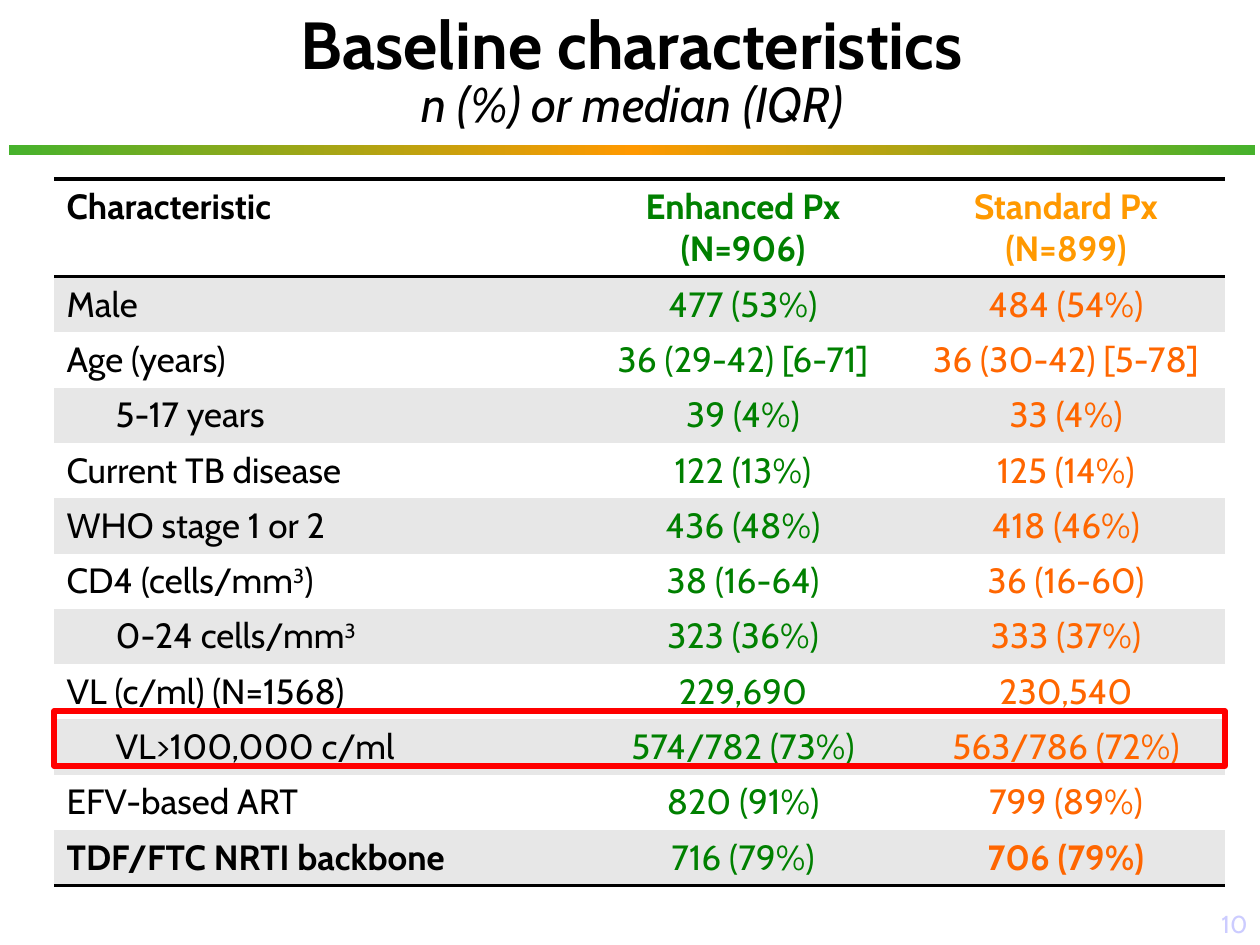
from lxml.etree import SubElement
from pptx import Presentation
from pptx.dml.color import RGBColor
from pptx.enum.shapes import MSO_SHAPE
from pptx.enum.text import MSO_ANCHOR, PP_ALIGN
from pptx.oxml.ns import qn
from pptx.util import Emu, Pt

FONT = "Cabin"
COLORS = {
    "text": "000000", "white": "FFFFFF", "band": "E7E7E7",
    "enhanced": "008000", "standard": "FF6600", "standard_head": "FF9900",
    "rule_edge": "46B22C", "rule_middle": "FF9900",
    "highlight": "FF0000", "number": "CCCCFF",
}
HEADER = ["Characteristic", "Enhanced Px\n(N=906)", "Standard Px\n(N=899)"]
# Indent level, label, enhanced value, standard value; ^ encloses a superscript
ROWS = [
    (0, "Male", "477 (53%)", "484 (54%)"),
    (0, "Age (years)", "36 (29-42) [6-71]", "36 (30-42) [5-78]"),
    (1, "5-17 years", "39 (4%)", "33 (4%)"),
    (0, "Current TB disease", "122 (13%)", "125 (14%)"),
    (0, "WHO stage 1 or 2", "436 (48%)", "418 (46%)"),
    (0, "CD4 (cells/mm^3^)", "38 (16-64)", "36 (16-60)"),
    (1, "0-24 cells/mm^3^", "323 (36%)", "333 (37%)"),
    (0, "VL (c/ml) (N=1568)", "229,690", "230,540"),
    (1, "VL>100,000 c/ml", "574/782 (73%)", "563/786 (72%)"),
    (0, "EFV-based ART", "820 (91%)", "799 (89%)"),
    (0, "TDF/FTC NRTI backbone", "716 (79%)", "706 (79%)"),
]
COLUMN_WIDTHS = [525, 328, 318]
HEADER_HEIGHT, ROW_HEIGHT, LEVEL_INDENT = 97, 55, 49
NO_GRID_STYLE = "{2D5ABB26-0587-4C30-8999-92F81FD0307C}"


def px(length):
    return Emu(round(length * 914400 / 126))


def rgb(name):
    return RGBColor.from_string(COLORS[name])


def add_run(paragraph, text, size, color, bold=False, italic=False):
    run = paragraph.add_run()
    run.text = text
    font = run.font
    font.name, font.size, font.bold, font.italic = FONT, Pt(size), bold, italic
    font.color.rgb = rgb(color)
    return run


def add_rectangle(slide, box):
    shape = slide.shapes.add_shape(MSO_SHAPE.RECTANGLE, *map(px, box))
    shape.shadow.inherit = False
    return shape


def add_title(slide, box):
    title = slide.shapes.title
    title.left, title.top, title.width, title.height = map(px, box)
    frame = title.text_frame
    frame.word_wrap = True
    frame.vertical_anchor = MSO_ANCHOR.MIDDLE
    paragraph = frame.paragraphs[0]
    paragraph.alignment = PP_ALIGN.CENTER
    paragraph.line_spacing = 0.85
    add_run(paragraph, "Baseline characteristics", 38, "text", bold=True)
    paragraph.add_line_break()
    add_run(paragraph, "n (%) or median (IQR)", 28, "text", italic=True)


def add_gradient_rule(slide, box):
    rule = add_rectangle(slide, box)
    rule.line.fill.background()
    rule.fill.gradient()
    rule.fill.gradient_angle = 0
    stops = rule._element.spPr.find(qn("a:gradFill")).find(qn("a:gsLst"))
    stops.clear()
    for position, name in enumerate(["rule_edge", "rule_middle", "rule_edge"]):
        stop = SubElement(stops, qn("a:gs"), pos=str(position * 50000))
        SubElement(stop, qn("a:srgbClr"), val=COLORS[name])


def add_border(cell, side):
    line = SubElement(cell._tc.get_or_add_tcPr(), qn(f"a:ln{side}"), w=str(Pt(2)))
    fill = SubElement(line, qn("a:solidFill"))
    SubElement(fill, qn("a:srgbClr"), val=COLORS["text"])


def fill_cell(cell, text, color, background, borders="", bold=False,
              centered=True, level=0):
    for side in borders:
        add_border(cell, side)
    cell.fill.solid()
    cell.fill.fore_color.rgb = rgb(background)
    paragraph = cell.text_frame.paragraphs[0]
    paragraph.alignment = PP_ALIGN.CENTER if centered else PP_ALIGN.LEFT
    if level:
        paragraph._p.get_or_add_pPr().set("marL", str(px(level * LEVEL_INDENT)))
    for line_index, line in enumerate(text.split("\n")):
        if line_index:
            paragraph.add_line_break()
        for part_index, part in enumerate(line.split("^")):
            if part:
                run = add_run(paragraph, part, 20, color, bold)
                if part_index % 2:
                    run.font._element.set("baseline", "30000")


def add_characteristics_table(slide, left, top):
    height = HEADER_HEIGHT + len(ROWS) * ROW_HEIGHT
    frame = slide.shapes.add_table(len(ROWS) + 1, len(HEADER), px(left), px(top),
                                   px(sum(COLUMN_WIDTHS)), px(height))
    table = frame.table
    table.horz_banding = False
    table._tbl.tblPr.find(qn("a:tableStyleId")).text = NO_GRID_STYLE
    for column, width in zip(table.columns, COLUMN_WIDTHS):
        column.width = px(width)
    for index, row in enumerate(table.rows):
        row.height = px(ROW_HEIGHT if index else HEADER_HEIGHT)

    # Header row
    header_colors = ["text", "enhanced", "standard_head"]
    for column, (text, color) in enumerate(zip(HEADER, header_colors)):
        fill_cell(table.cell(0, column), text, color, "white", "TB",
                  bold=True, centered=column > 0)

    # Banded body rows
    for row, (level, *texts) in enumerate(ROWS, start=1):
        last = row == len(ROWS)
        for column, color in enumerate(["text", "enhanced", "standard"]):
            fill_cell(table.cell(row, column), texts[column], color,
                      "band" if row % 2 else "white", "B" if last else "",
                      bold=last and column != 1, centered=column > 0,
                      level=0 if column else level)


def add_slide_number(slide, box):
    frame = slide.shapes.add_textbox(*map(px, box)).text_frame
    frame.word_wrap = True
    frame.vertical_anchor = MSO_ANCHOR.BOTTOM
    paragraph = frame.paragraphs[0]
    paragraph.alignment = PP_ALIGN.RIGHT
    add_run(paragraph, "10", 14, "number")


def add_highlight(slide, box):
    highlight = add_rectangle(slide, box)
    highlight.fill.background()
    highlight.line.color.rgb = rgb("highlight")
    highlight.line.width = Pt(3)


def main():
    presentation = Presentation()
    presentation.slide_width, presentation.slide_height = px(1260), px(945)
    slide = presentation.slides.add_slide(presentation.slide_layouts[5])
    add_gradient_rule(slide, (9, 145, 1246, 10))
    add_title(slide, (123, 32, 1018, 84))
    add_characteristics_table(slide, 54, 179)
    add_slide_number(slide, (1134, 882, 126, 63))
    add_highlight(slide, (54, 711, 1171, 55))
    presentation.save("out.pptx")


if __name__ == "__main__":
    main()
